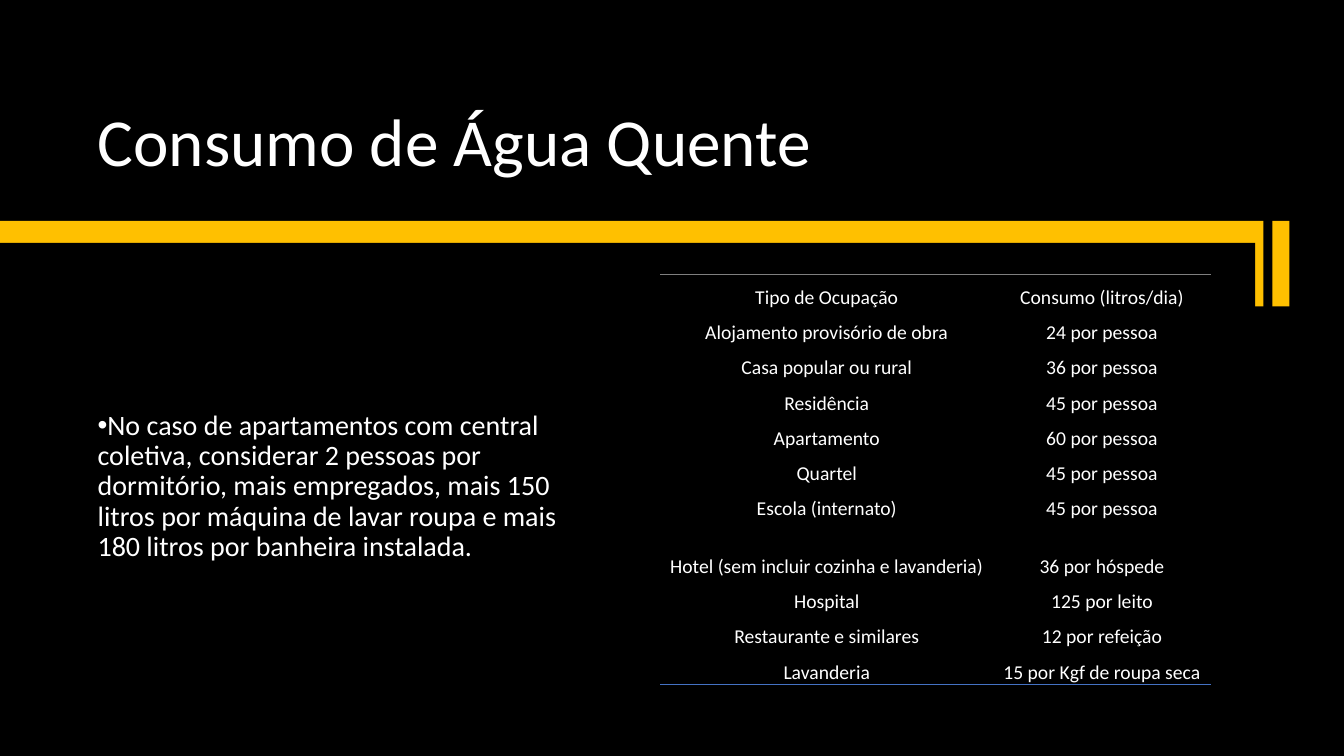
from lxml import etree
from pptx import Presentation
from pptx.dml.color import RGBColor
from pptx.enum.shapes import MSO_SHAPE as Shape
from pptx.enum.text import MSO_ANCHOR as Anchor, PP_ALIGN as Align
from pptx.oxml.ns import qn
from pptx.util import Inches, Pt

FONT = "Calibri"
BLACK, WHITE, GOLD = "000000", "FFFFFF", "FFC000"
GREY, BLUE = "7F7F7F", "4472C4"
NO_GRID = "{2D5ABB26-0587-4C30-8999-92F81FD0307C}"

TITLE = "Consumo de Água Quente"
NOTE = (
    "No caso de apartamentos com central coletiva, considerar 2 pessoas por "
    "dormitório, mais empregados, mais 150 litros por máquina de lavar roupa "
    "e mais 180 litros por banheira instalada."
)
USAGE = [
    ("Tipo de Ocupação", "Consumo (litros/dia)"),
    ("Alojamento provisório de obra", "24 por pessoa"),
    ("Casa popular ou rural", "36 por pessoa"),
    ("Residência", "45 por pessoa"),
    ("Apartamento", "60 por pessoa"),
    ("Quartel", "45 por pessoa"),
    ("Escola (internato)", "45 por pessoa"),
    ("Hotel (sem incluir cozinha e lavanderia)", "36 por hóspede"),
    ("Hospital", "125 por leito"),
    ("Restaurante e similares", "12 por refeição"),
    ("Lavanderia", "15 por Kgf de roupa seca"),
]
WIDTHS = (3.3, 2.16)
ROW_H, HOTEL_H, HOTEL = 0.35, 0.57, 7


def color(code):
    return RGBColor.from_string(code)


def style(para, size):
    for run in para.runs:
        run.font.name = FONT
        run.font.size = Pt(size)
        run.font.color.rgb = color(WHITE)


def add_bar(slide, left, top, width, height, fill):
    bar = slide.shapes.add_shape(
        Shape.RECTANGLE, Inches(left), Inches(top), Inches(width), Inches(height)
    )
    bar.shadow.inherit = False
    bar.fill.solid()
    bar.fill.fore_color.rgb = color(fill)
    bar.line.fill.background()


def add_text(slide, left, top, width, height, text, size, anchor):
    box = slide.shapes.add_textbox(
        Inches(left), Inches(top), Inches(width), Inches(height)
    )
    frame = box.text_frame
    frame.word_wrap = True
    frame.vertical_anchor = anchor
    frame.text = text
    para = frame.paragraphs[0]
    para.line_spacing = 0.9
    style(para, size)
    return para


def add_bullet(para):
    props = para._p.get_or_add_pPr()
    props.set("marL", "0")
    props.set("indent", str(-Inches(0.25)))
    etree.SubElement(props, qn("a:buFont")).set("typeface", "Arial")
    etree.SubElement(props, qn("a:buChar")).set("char", "•")


def add_edge(cell, side, code, width):
    """Draw one border of a cell; side is T or B."""
    edge = etree.Element(qn(f"a:ln{side}"), w=str(Pt(width)))
    fill = etree.SubElement(edge, qn("a:solidFill"))
    etree.SubElement(fill, qn("a:srgbClr")).set("val", code)
    cell._tc.get_or_add_tcPr().insert(0, edge)


def fill_cell(cell, text):
    cell.fill.background()
    cell.vertical_anchor = Anchor.BOTTOM
    cell.margin_left = cell.margin_right = Inches(0.01)
    cell.margin_top, cell.margin_bottom = Inches(0.1), 0
    cell.text_frame.text = text
    para = cell.text_frame.paragraphs[0]
    para.alignment = Align.CENTER
    style(para, 14)


def add_usage(slide, left, top):
    heights = [HOTEL_H if i == HOTEL else ROW_H for i in range(len(USAGE))]
    table = slide.shapes.add_table(
        len(USAGE), len(WIDTHS), Inches(left), Inches(top),
        Inches(sum(WIDTHS)), Inches(sum(heights)),
    ).table
    table.first_row = table.horz_banding = False
    table._tbl.tblPr.find(qn("a:tableStyleId")).text = NO_GRID
    for col, width in zip(table.columns, WIDTHS):
        col.width = Inches(width)
    for row, height, texts in zip(table.rows, heights, USAGE):
        row.height = Inches(height)
        for cell, text in zip(row.cells, texts):
            fill_cell(cell, text)
    for col in range(len(WIDTHS)):
        add_edge(table.cell(0, col), "T", GREY, 0.5)
        add_edge(table.cell(len(USAGE) - 1, col), "B", BLUE, 1)


def main():
    deck = Presentation()
    deck.slide_width, deck.slide_height = Inches(13.33), Inches(7.5)
    slide = deck.slides.add_slide(deck.slide_layouts[6])
    slide.background.fill.solid()
    slide.background.fill.fore_color.rgb = color(BLACK)

    add_text(slide, 0.87, 0.42, 11.01, 1.42, TITLE, 48, Anchor.BOTTOM)
    add_bar(slide, 0, 2.19, 12.53, 0.85, GOLD)
    add_bar(slide, 0, 2.41, 12.45, 4.67, BLACK)
    note = add_text(slide, 0.87, 2.84, 4.96, 3.98, NOTE, 20, Anchor.MIDDLE)
    note.space_after = Pt(6)
    add_bullet(note)
    add_bar(slide, 12.62, 2.19, 0.17, 0.85, GOLD)
    add_usage(slide, 6.55, 2.72)
    deck.save("out.pptx")


if __name__ == "__main__":
    main()
